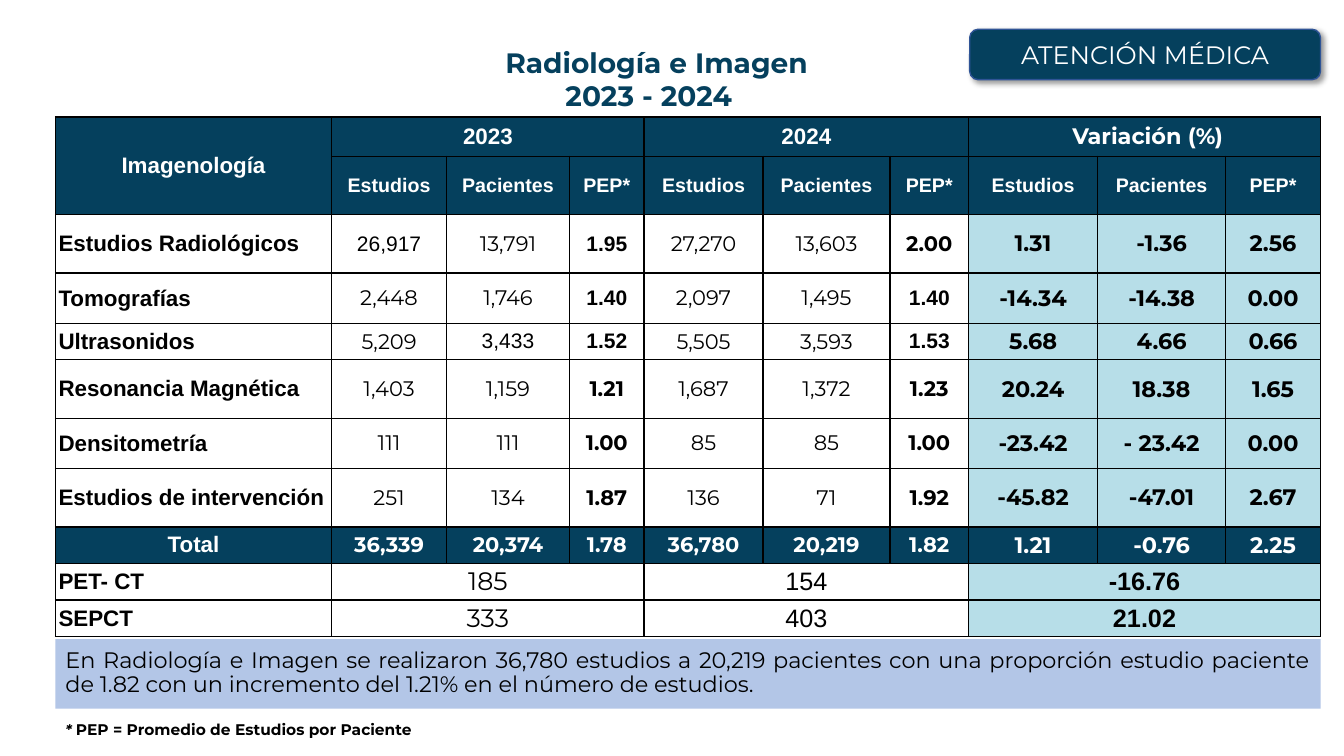
from lxml import etree
from pptx import Presentation
from pptx import util as u
from pptx.dml.color import RGBColor
from pptx.enum import shapes, text
from pptx.oxml.ns import qn

COLORS = {"navy": "05405D", "sky": "B7DEE8", "lavender": "B3C6E7",
          "blue": "2F5496", "white": "FFFFFF", "black": "000000"}
WIDTH, HEIGHT = u.Inches(13.33), u.Inches(7.5)
MONTSERRAT, ARIAL = "Montserrat", "Arial"
LEFT, FULL = 4.13, 94.13

# Column widths and row heights, in percent of the slide
COLUMNS = [20.55, 8.55, 9.15, 5.55, 8.85, 9.45, 5.85, 9.6, 9.53, 7.05]
ROWS = [5.2, 7.73, 7.73, 6.67, 4.8, 7.73, 6.67, 7.73, 4.8, 4.8, 4.8]

GROUPS = ["2023", "2024", " Variación (%)"]
MEASURES = ["Estudios", "Pacientes", "PEP*"]
STUDIES = [
    ["Estudios Radiológicos", "26,917", "13,791", "1.95", "27,270", "13,603", "2.00",
     "1.31", "-1.36", "2.56"],
    ["Tomografías", "2,448", "1,746", "1.40", "2,097", "1,495", "1.40",
     "-14.34", "-14.38", "0.00"],
    ["Ultrasonidos", "5,209", "3,433", "1.52", "5,505", "3,593", "1.53",
     "5.68", "4.66", "0.66"],
    ["Resonancia Magnética", "1,403", "1,159", "1.21", "1,687", "1,372", "1.23",
     "20.24", "18.38", "1.65"],
    ["Densitometría", "111", "111", "1.00", "85", "85", "1.00",
     "-23.42", "- 23.42", "0.00"],
    ["Estudios de intervención", "251", "134", "1.87", "136", "71", "1.92",
     "-45.82", "-47.01", "2.67"],
    ["Total", "36,339", "20,374", "1.78", "36,780", "20,219", "1.82",
     "1.21", "-0.76", "2.25"],
]
SCANS = [["PET- CT", "185", "154", "-16.76"], ["SEPCT", "333", "403", "21.02"]]
TOTAL_ROW = 8
# Values set in Arial, as (row, column)
ARIAL_VALUES = {(2, 1), (2, 3), (3, 3), (3, 6), (4, 2), (4, 3), (4, 6)}


def across(percent):
    return int(WIDTH * percent / 100)


def down(percent):
    return int(HEIGHT * percent / 100)


def place(left, top, width, height):
    return across(left), down(top), across(width), down(height)


def rgb(name):
    return RGBColor.from_string(COLORS[name])


def style(font, size, color, name=MONTSERRAT, bold=False):
    font.size, font.name, font.bold = u.Pt(size), name, bold
    font.color.rgb = rgb(color)


def add_box(slide, preset, box, lines, size, color, fill=None, bold=False,
            align=text.PP_ALIGN.CENTER):
    shape = slide.shapes.add_shape(preset, *place(*box))
    shape.shadow.inherit = False
    shape.line.fill.background()
    if fill:
        shape.fill.solid()
        shape.fill.fore_color.rgb = rgb(fill)
    else:
        shape.fill.background()
    frame = shape.text_frame
    frame.word_wrap = True
    frame.vertical_anchor = text.MSO_ANCHOR.MIDDLE
    for index, line in enumerate(lines):
        paragraph = frame.add_paragraph() if index else frame.paragraphs[0]
        paragraph.text = line
        paragraph.alignment = align
        style(paragraph.font, size, color, bold=bold)
    return shape


def add_shadow(shape):
    effects = shape._element.spPr.find(qn("a:effectLst"))
    shadow = etree.SubElement(effects, qn("a:outerShdw"), blurRad="50800",
                              dist="38100", dir="2700000", rotWithShape="0")
    color = etree.SubElement(shadow, qn("a:srgbClr"), val=COLORS["black"])
    etree.SubElement(color, qn("a:alpha"), val="40000")


def add_borders(cell):
    properties = cell._tc.get_or_add_tcPr()
    for side in ("a:lnL", "a:lnR", "a:lnT", "a:lnB"):
        line = etree.SubElement(properties, qn(side), w="12700")
        fill = etree.SubElement(line, qn("a:solidFill"))
        etree.SubElement(fill, qn("a:srgbClr"), val=COLORS["black"])


def fill_cell(cell, value, size, name=MONTSERRAT, bold=True, color="black",
              align=text.PP_ALIGN.CENTER):
    cell.vertical_anchor = text.MSO_ANCHOR.MIDDLE
    cell.margin_left = cell.margin_right = u.Inches(0.03)
    cell.margin_top = cell.margin_bottom = u.Inches(0.03)
    paragraph = cell.text_frame.paragraphs[0]
    paragraph.text = value
    paragraph.alignment = align
    style(paragraph.font, size, color, name, bold)


def add_grid(slide):
    box = place(LEFT, 15.47, FULL, sum(ROWS))
    table = slide.shapes.add_table(len(ROWS), len(COLUMNS), *box).table
    for column, width in zip(table.columns, COLUMNS):
        column.width = across(width)
    for row, height in zip(table.rows, ROWS):
        row.height = down(height)
    for r in range(len(ROWS)):
        for c in range(len(COLUMNS)):
            cell = table.cell(r, c)
            add_borders(cell)
            if r < 2 or r == TOTAL_ROW:
                shade = "navy"
            else:
                shade = "sky" if c > 6 else "white"
            cell.fill.solid()
            cell.fill.fore_color.rgb = rgb(shade)
    return table


def fill_header(table):
    table.cell(0, 0).merge(table.cell(1, 0))
    fill_cell(table.cell(0, 0), "Imagenología", 16, ARIAL, color="white")
    for g, group in enumerate(GROUPS):
        first = 1 + 3 * g
        table.cell(0, first).merge(table.cell(0, first + 2))
        fill_cell(table.cell(0, first), group, 16,
                  MONTSERRAT if g == 2 else ARIAL, color="white")
        for m, measure in enumerate(MEASURES):
            fill_cell(table.cell(1, first + m), measure, 14, ARIAL, color="white")


def fill_label(table, r, label):
    total = r == TOTAL_ROW
    fill_cell(table.cell(r, 0), label, 16, ARIAL,
              color="white" if total else "black",
              align=text.PP_ALIGN.CENTER if total else text.PP_ALIGN.LEFT)


def fill_body(table):
    for r, (label, *values) in enumerate(STUDIES, 2):
        fill_label(table, r, label)
        total = r == TOTAL_ROW
        for c, value in enumerate(values, 1):
            fill_cell(table.cell(r, c), value, 16 if c > 6 else 15,
                      ARIAL if (r, c) in ARIAL_VALUES else MONTSERRAT,
                      bold=total or c > 6 or c % 3 == 0,
                      color="white" if total else "black")
    for r, (label, *values) in enumerate(SCANS, TOTAL_ROW + 1):
        fill_label(table, r, label)
        for g, value in enumerate(values):
            first = 1 + 3 * g
            table.cell(r, first).merge(table.cell(r, first + 2))
            fill_cell(table.cell(r, first), value, 18,
                      ARIAL if g else MONTSERRAT, bold=g == 2)


def add_footnote(slide):
    frame = slide.shapes.add_textbox(*place(LEFT, 94, 47.48, 5.2)).text_frame
    frame.word_wrap = True
    frame.margin_top = frame.margin_bottom = u.Inches(0.1)
    paragraph = frame.paragraphs[0]
    for words, size, italic in (("* ", 10.5, True),
                                ("PEP = Promedio de Estudios por Paciente", 11, False)):
        run = paragraph.add_run()
        run.text = words
        style(run.font, size, "black", bold=True)
        run.font.italic = italic


def main():
    presentation = Presentation()
    presentation.slide_width, presentation.slide_height = WIDTH, HEIGHT
    slide = presentation.slides.add_slide(presentation.slide_layouts[6])
    rounded = shapes.MSO_SHAPE.ROUNDED_RECTANGLE

    # Table
    table = add_grid(slide)
    fill_header(table)
    fill_body(table)
    add_footnote(slide)

    # Title and section badge
    title = add_box(slide, rounded, (24.83, 6.27, 47.48, 11.07),
                    [" Radiología e Imagen", "2023 - 2024 "], 20, "navy", bold=True)
    title.adjustments[0] = 0.44
    title.text_frame.margin_bottom = u.Inches(0.26)
    badge = add_box(slide, rounded, (72.15, 3.87, 26.1, 6.67),
                    ["ATENCIÓN MÉDICA"], 18, "white", fill="navy")
    badge.line.color.rgb = rgb("blue")
    badge.line.width = u.Pt(1)
    add_shadow(badge)

    # Summary band
    summary = add_box(
        slide, shapes.MSO_SHAPE.RECTANGLE, (LEFT, 84.53, FULL, 9.2),
        ["En Radiología e Imagen se realizaron 36,780 estudios a 20,219 pacientes con una "
         "proporción estudio paciente de 1.82 con un incremento del 1.21% en el número de "
         "estudios."], 16, "black", fill="lavender", align=text.PP_ALIGN.JUSTIFY)
    summary.text_frame.vertical_anchor = text.MSO_ANCHOR.TOP
    summary.text_frame.margin_top = u.Inches(0.1)
    summary.text_frame.paragraphs[0].line_spacing = 0.9

    presentation.save("out.pptx")


if __name__ == "__main__":
    main()
